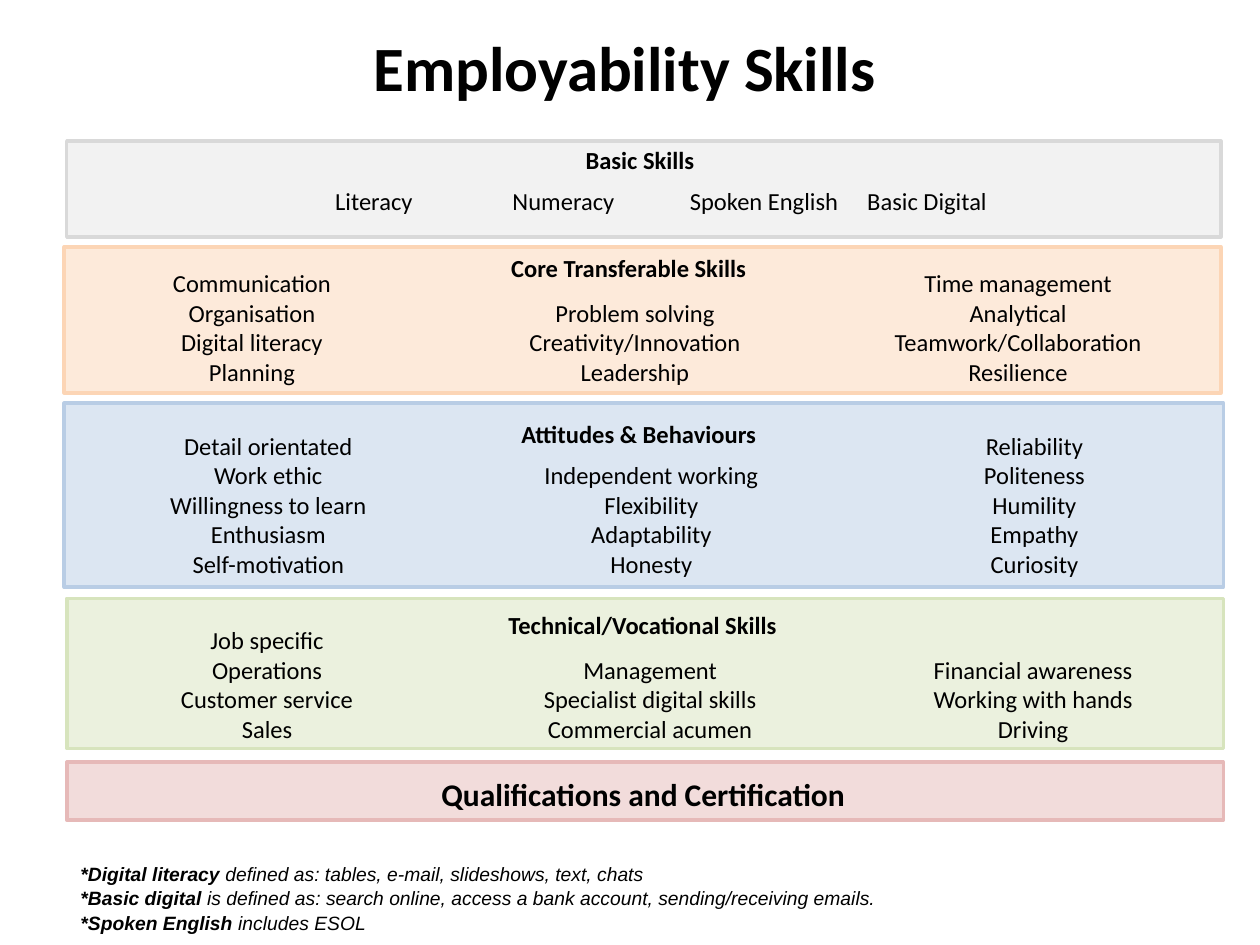
from dataclasses import dataclass

import pptx
import pptx.dml.color
import pptx.enum.shapes
import pptx.enum.text
import pptx.util
from pptx.util import Inches

ALIGN = pptx.enum.text.PP_ALIGN
ANCHOR = pptx.enum.text.MSO_ANCHOR


@dataclass(frozen=True)
class Theme:
    font: str = "Calibri"
    note_font: str = "Arial"
    text: str = "000000"
    title: int = 36
    closing: int = 18
    body: int = 14
    note: int = 11
    border: int = 2
    row: float = 0.233  # height of one body line, inches


@dataclass(frozen=True)
class Box:
    left: float
    top: float
    width: float
    height: float


@dataclass(frozen=True)
class Column:
    first_row: int
    skills: tuple[str, ...]


@dataclass(frozen=True)
class Band:
    panel: Box
    fill: str
    border: str
    heading: str
    heading_box: Box
    heading_size: int
    grid: Box | None = None
    columns: tuple[Column, ...] = ()
    alignment: ALIGN = ALIGN.CENTER


@dataclass(frozen=True)
class Note:
    term: str
    meaning: str


THEME = Theme()

BANDS = (
    Band(Box(0.53, 1.12, 9.16, 0.76), "F2F2F2", "D9D9D9",
         "Basic Skills", Box(0.5, 1.1, 9.16, 0.34), THEME.body,
         Box(2.66, 1.48, 5.63, 0.3),
         (Column(0, ("Literacy",)), Column(0, ("Numeracy",)),
          Column(0, ("Spoken English",)), Column(0, ("Basic Digital",))),
         ALIGN.LEFT),
    Band(Box(0.51, 1.96, 9.18, 1.16), "FDEADA", "FCD5B5",
         "Core Transferable Skills", Box(0.41, 1.96, 9.16, 0.34), THEME.body,
         Box(0.48, 2.13, 9.12, 0.95),
         (Column(0, ("Communication", "Organisation", "Digital literacy", "Planning")),
          Column(1, ("Problem solving", "Creativity/Innovation", "Leadership")),
          Column(0, ("Time management", "Analytical", "Teamwork/Collaboration",
                     "Resilience")))),
    Band(Box(0.51, 3.2, 9.2, 1.46), "DCE6F2", "B9CDE5",
         "Attitudes & Behaviours", Box(0.49, 3.28, 9.16, 0.34), THEME.body,
         Box(0.61, 3.42, 9.12, 1.18),
         (Column(0, ("Detail orientated", "Work ethic", "Willingness to learn",
                     "Enthusiasm", "Self-motivation")),
          Column(1, ("Independent working", "Flexibility", "Adaptability", "Honesty")),
          Column(0, ("Reliability", "Politeness", "Humility", "Empathy", "Curiosity")))),
    Band(Box(0.53, 4.75, 9.18, 1.19), "EBF1DE", "D7E4BD",
         "Technical/Vocational Skills", Box(0.52, 4.79, 9.16, 0.34), THEME.body,
         Box(0.6, 4.73, 9.12, 1.18),
         (Column(1, ("Job specific", "Operations", "Customer service", "Sales")),
          Column(2, ("Management", "Specialist digital skills", "Commercial acumen")),
          Column(2, ("Financial awareness", "Working with hands", "Driving")))),
    Band(Box(0.53, 6.05, 9.18, 0.46), "F2DCDB", "E6B9B8",
         "Qualifications and Certification", Box(0.5, 6.1, 9.21, 0.4), THEME.closing),
)

NOTES = (
    Note("*Digital literacy ", "defined as: tables, e-mail, slideshows, text, chats"),
    Note("*Basic digital ", "is defined as: search online, access a bank account, "
                            "sending/receiving emails."),
    Note("*Spoken English ", "includes ESOL"),
)


def rgb(value: str) -> pptx.dml.color.RGBColor:
    return pptx.dml.color.RGBColor.from_string(value)


def place(box: Box) -> tuple[int, ...]:
    return tuple(Inches(n) for n in (box.left, box.top, box.width, box.height))


def add_run(paragraph, text: str, size: int, bold: bool = False,
            italic: bool = False, font: str = THEME.font) -> None:
    run = paragraph.add_run()
    run.text = text
    run.font.name = font
    run.font.size = pptx.util.Pt(size)
    run.font.bold = bold
    run.font.italic = italic
    run.font.color.rgb = rgb(THEME.text)


def add_text_frame(slide, box: Box):
    text_frame = slide.shapes.add_textbox(*place(box)).text_frame
    text_frame.word_wrap = True
    return text_frame


def add_paragraph(text_frame, index: int):
    return text_frame.add_paragraph() if index else text_frame.paragraphs[0]


def add_heading(slide, box: Box, text: str, size: int,
                anchor: ANCHOR = ANCHOR.TOP) -> None:
    text_frame = add_text_frame(slide, box)
    text_frame.vertical_anchor = anchor
    paragraph = text_frame.paragraphs[0]
    paragraph.alignment = ALIGN.CENTER
    add_run(paragraph, text, size, bold=True)


def add_columns(slide, band: Band) -> None:
    width = band.grid.width / len(band.columns)
    for index, column in enumerate(band.columns):
        text_frame = add_text_frame(slide, Box(
            band.grid.left + index * width,
            band.grid.top + column.first_row * THEME.row,
            width, len(column.skills) * THEME.row))
        text_frame.margin_left = text_frame.margin_right = 0
        text_frame.margin_top = text_frame.margin_bottom = 0
        for row, skill in enumerate(column.skills):
            paragraph = add_paragraph(text_frame, row)
            paragraph.alignment = band.alignment
            add_run(paragraph, skill, THEME.body)


def add_band(slide, band: Band) -> None:
    panel = slide.shapes.add_shape(
        pptx.enum.shapes.MSO_SHAPE.RECTANGLE, *place(band.panel))
    panel.shadow.inherit = False
    panel.fill.solid()
    panel.fill.fore_color.rgb = rgb(band.fill)
    panel.line.color.rgb = rgb(band.border)
    panel.line.width = pptx.util.Pt(THEME.border)
    add_heading(slide, band.heading_box, band.heading, band.heading_size)
    if band.grid:
        add_columns(slide, band)


def add_notes(slide, box: Box) -> None:
    text_frame = add_text_frame(slide, box)
    for index, note in enumerate(NOTES):
        paragraph = add_paragraph(text_frame, index)
        paragraph.line_spacing = 1.07
        add_run(paragraph, note.term, THEME.note, True, True, THEME.note_font)
        add_run(paragraph, note.meaning, THEME.note, False, True, THEME.note_font)


def main() -> None:
    presentation = pptx.Presentation()
    presentation.slide_width = Inches(10)
    presentation.slide_height = Inches(7.5)
    slide = presentation.slides.add_slide(presentation.slide_layouts[6])

    # Title
    add_heading(slide, Box(-0.04, 0.16, 10, 0.74), "Employability Skills",
                THEME.title, ANCHOR.MIDDLE)
    # Skill bands
    for band in BANDS:
        add_band(slide, band)
    # Definitions
    add_notes(slide, Box(0.54, 6.78, 9.17, 0.7))

    presentation.save("out.pptx")


if __name__ == "__main__":
    main()
